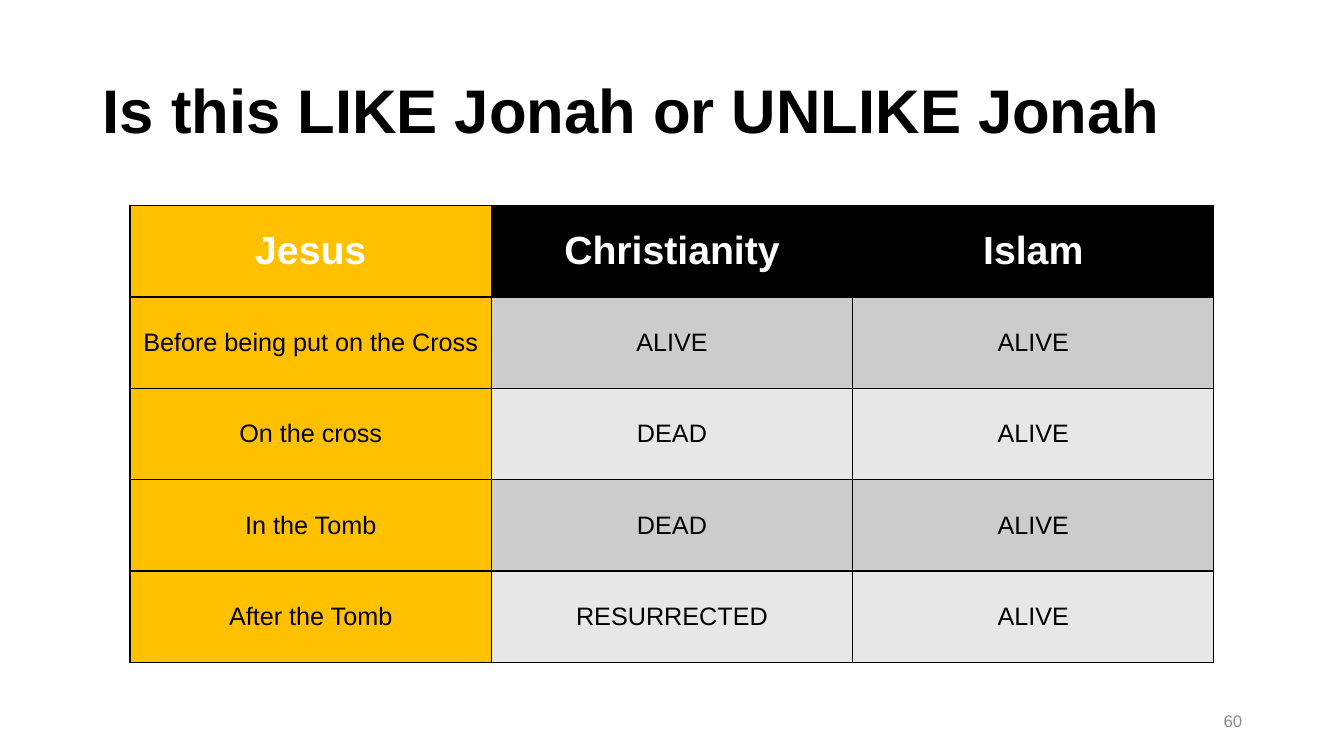
from dataclasses import dataclass

from lxml import etree
from pptx import Presentation
from pptx.dml.color import RGBColor
from pptx.enum.text import MSO_ANCHOR as Anchor, MSO_AUTO_SIZE as AutoSize, PP_ALIGN as Align
from pptx.oxml.ns import qn
from pptx.util import Inches, Pt


@dataclass(frozen=True)
class Theme:
    font: str = "Arial"
    black: str = "000000"
    white: str = "FFFFFF"
    gold: str = "FFC000"
    dark_band: str = "CCCCCC"
    light_band: str = "E7E7E7"
    muted: str = "8C8C8C"
    title_size: int = 44
    header_size: int = 28
    body_size: int = 18
    number_size: int = 12


THEME = Theme()

COMPARISON = [
    ("Jesus", "Christianity", "Islam"),
    ("Before being put on the Cross", "ALIVE", "ALIVE"),
    ("On the cross", "DEAD", "ALIVE"),
    ("In the Tomb", "DEAD", "ALIVE"),
    ("After the Tomb", "RESURRECTED", "ALIVE"),
]


def write(frame, text, size, color, align, bold=False):
    frame.text = text
    paragraph = frame.paragraphs[0]
    paragraph.alignment = align
    font = paragraph.runs[0].font
    font.name = THEME.font
    font.size = Pt(size)
    font.bold = bold
    font.color.rgb = RGBColor.from_string(color)
    return paragraph


def set_borders(cell, color):
    properties = cell._tc.get_or_add_tcPr()
    for position, side in enumerate(("lnL", "lnR", "lnT", "lnB")):
        line = etree.Element(qn(f"a:{side}"), w=str(Pt(1)))
        fill = etree.SubElement(line, qn("a:solidFill"))
        etree.SubElement(fill, qn("a:srgbClr"), val=color)
        properties.insert(position, line)


def cell_fill(row, column):
    if column == 0:
        return THEME.gold
    if row == 0:
        return THEME.black
    return THEME.dark_band if row % 2 else THEME.light_band


def add_title(slide, text):
    title = slide.shapes.title
    title.left, title.top = Inches(0.92), Inches(0.4)
    title.width, title.height = Inches(11.5), Inches(1.45)
    frame = title.text_frame
    frame.word_wrap = True
    frame.auto_size = AutoSize.NONE
    frame.vertical_anchor = Anchor.MIDDLE
    heading = write(frame, text, THEME.title_size, THEME.black, Align.LEFT, bold=True)
    heading.line_spacing = 0.9


def add_comparison(slide, rows):
    table = slide.shapes.add_table(
        len(rows), len(rows[0]), Inches(1.29), Inches(2.04), Inches(10.75), Inches(4.53)
    ).table
    for row, labels in enumerate(rows):
        header = row == 0
        size = THEME.header_size if header else THEME.body_size
        color = THEME.white if header else THEME.black
        for column, label in enumerate(labels):
            cell = table.cell(row, column)
            cell.vertical_anchor = Anchor.MIDDLE
            cell.fill.solid()
            cell.fill.fore_color.rgb = RGBColor.from_string(cell_fill(row, column))
            set_borders(cell, THEME.black)
            write(cell.text_frame, label, size, color, Align.CENTER, bold=header)


def add_slide_number(slide, number):
    box = slide.shapes.add_textbox(Inches(9.42), Inches(6.95), Inches(3), Inches(0.4))
    frame = box.text_frame
    frame.word_wrap = True
    frame.vertical_anchor = Anchor.MIDDLE
    write(frame, number, THEME.number_size, THEME.muted, Align.RIGHT)


def main():
    deck = Presentation()
    deck.slide_width, deck.slide_height = Inches(13.33), Inches(7.5)
    slide = deck.slides.add_slide(deck.slide_layouts.get_by_name("Title Only"))
    add_title(slide, "Is this LIKE Jonah or UNLIKE Jonah")
    add_comparison(slide, COMPARISON)
    add_slide_number(slide, "60")
    deck.save("out.pptx")


if __name__ == "__main__":
    main()
